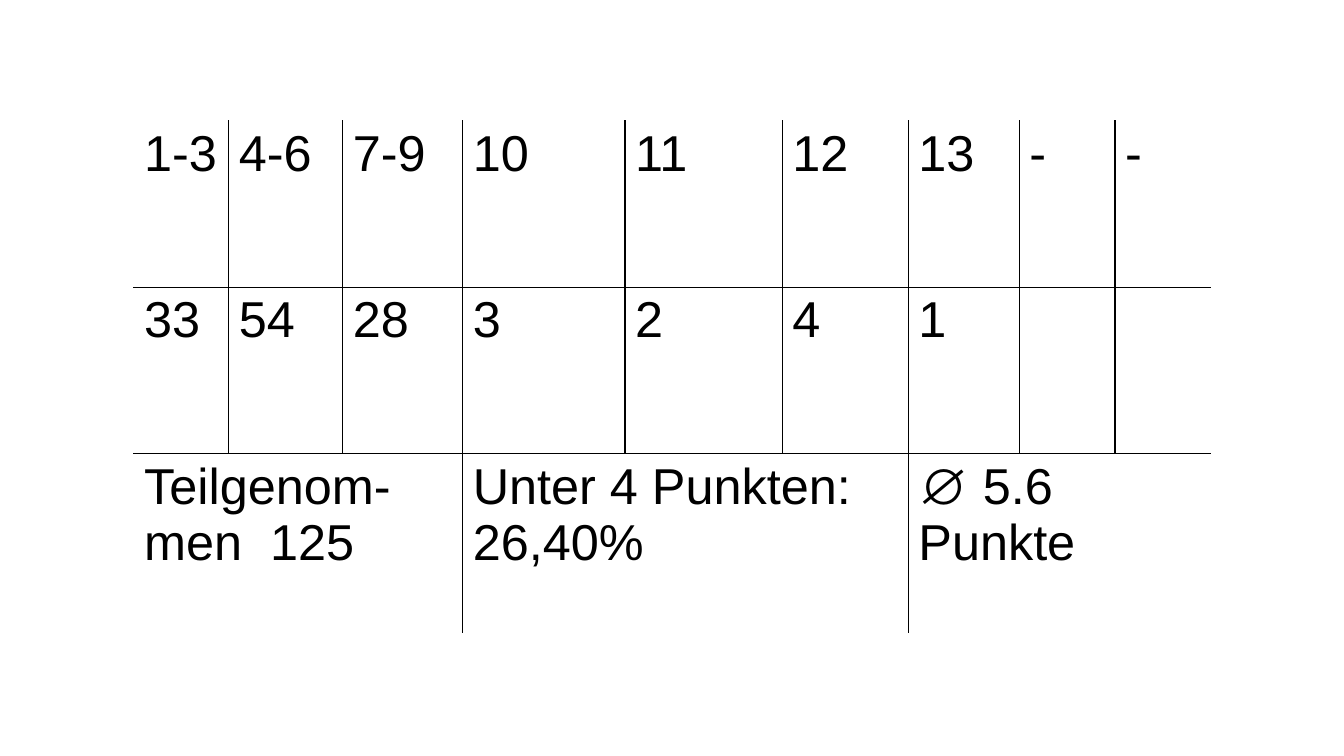
from lxml.etree import SubElement
from pptx import Presentation
from pptx.dml.color import RGBColor
from pptx.oxml.ns import qn
from pptx.util import Inches, Pt

COLORS = {"text": "000000", "rule": "000000", "paper": "FFFFFF"}
FONT = "Arial"
COL_WIDTHS = [0.94, 1.13, 1.19, 1.61, 1.56, 1.25, 1.1, 0.95, 0.95]
ROW_HEIGHTS = [1.65, 1.65, 1.79]
POINTS = ["1-3", "4-6", "7-9", "10", "11", "12", "13", "-", "-"]
COUNTS = ["33", "54", "28", "3", "2", "4", "1", "", ""]
SUMMARY = ["Teilgenom-men  125", "Unter 4 Punkten:\n26,40%", "∅ 5.6 Punkte"]
SPAN = len(POINTS) // len(SUMMARY)


def write_cell(cell, text):
    tf = cell.text_frame
    for i, line in enumerate(text.split("\n")):
        p = tf.add_paragraph() if i else tf.paragraphs[0]
        if not line:
            continue
        r = p.add_run()
        r.text = line
        r.font.name = FONT
        r.font.size = Pt(36)
        r.font.color.rgb = RGBColor.from_string(COLORS["text"])


def style_cell(cell, ruled):
    """Fill the cell and draw its four edges, dark where ruled is true."""
    cell.fill.solid()
    cell.fill.fore_color.rgb = RGBColor.from_string(COLORS["paper"])
    tcPr = cell._tc.get_or_add_tcPr()
    for i, (side, dark) in enumerate(ruled.items()):
        ln = SubElement(tcPr, qn(f"a:ln{side}"), w=str(Pt(1)))
        fill = SubElement(ln, qn("a:solidFill"))
        SubElement(fill, qn("a:srgbClr"), val=COLORS["rule" if dark else "paper"])
        tcPr.insert(i, ln)


def add_results_table(s, left, top):
    n_rows, n_cols = len(ROW_HEIGHTS), len(COL_WIDTHS)
    frame = s.shapes.add_table(n_rows, n_cols, Inches(left), Inches(top),
                               Inches(sum(COL_WIDTHS)), Inches(sum(ROW_HEIGHTS)))
    table = frame.table
    table.first_row = table.horz_banding = False
    for col, width in zip(table.columns, COL_WIDTHS):
        col.width = Inches(width)
    for row, height in zip(table.rows, ROW_HEIGHTS):
        row.height = Inches(height)

    last = n_rows - 1
    for r in range(n_rows):
        step = SPAN if r == last else 1
        for c in range(n_cols):
            style_cell(table.cell(r, c), {
                "L": c > 0 and c % step == 0,
                "R": c < n_cols - 1 and (c + 1) % step == 0,
                "T": r > 0,
                "B": r < last,
            })
    for r, texts in enumerate([POINTS, COUNTS]):
        for c, text in enumerate(texts):
            write_cell(table.cell(r, c), text)
    for i, text in enumerate(SUMMARY):
        cell = table.cell(last, i * SPAN)
        cell.merge(table.cell(last, (i + 1) * SPAN - 1))
        write_cell(cell, text)


def main():
    prs = Presentation()
    prs.slide_width, prs.slide_height = Inches(13.33), Inches(7.5)
    s = prs.slides.add_slide(prs.slide_layouts[6])
    add_results_table(s, 1.33, 1.2)
    prs.save("out.pptx")


if __name__ == "__main__":
    main()
